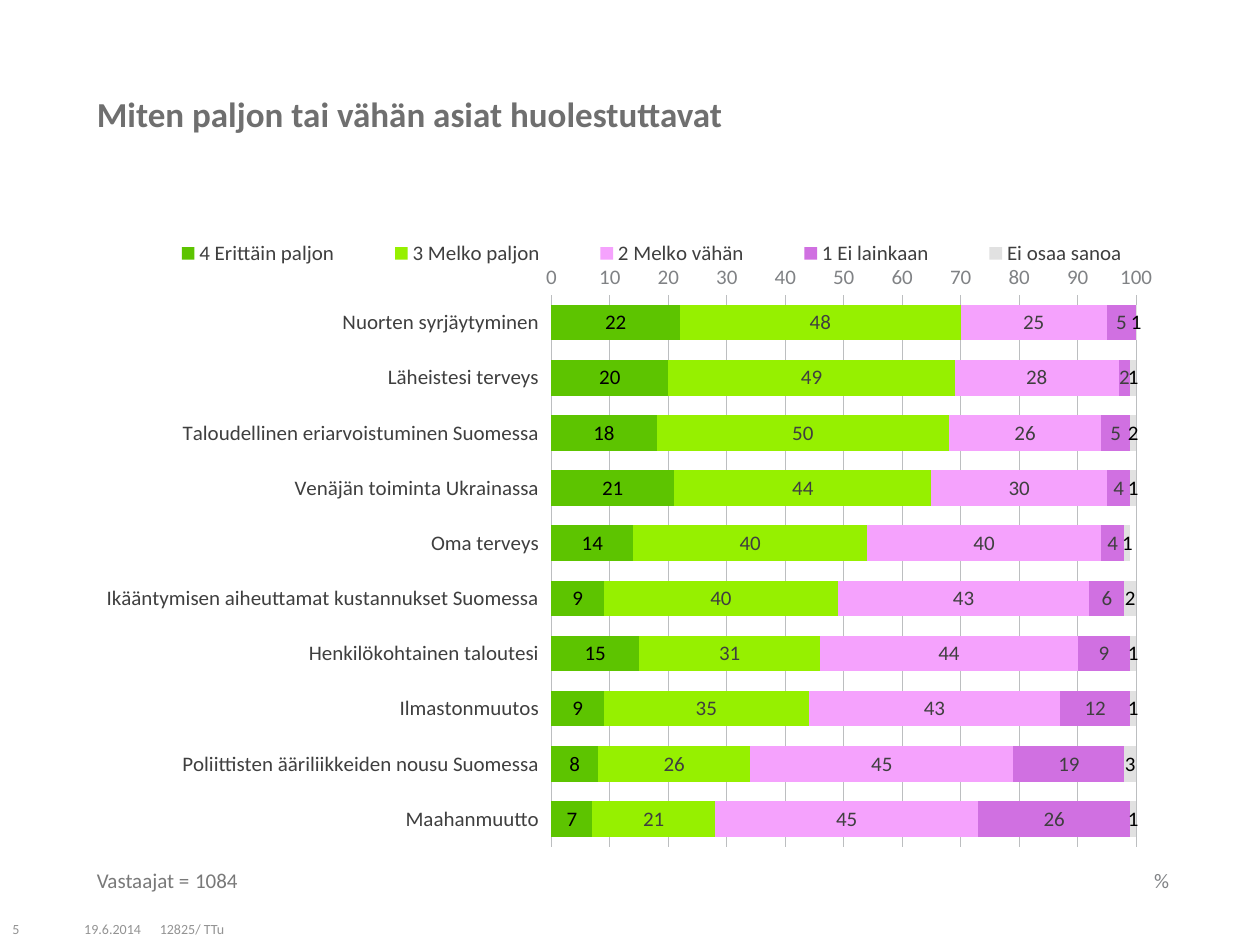
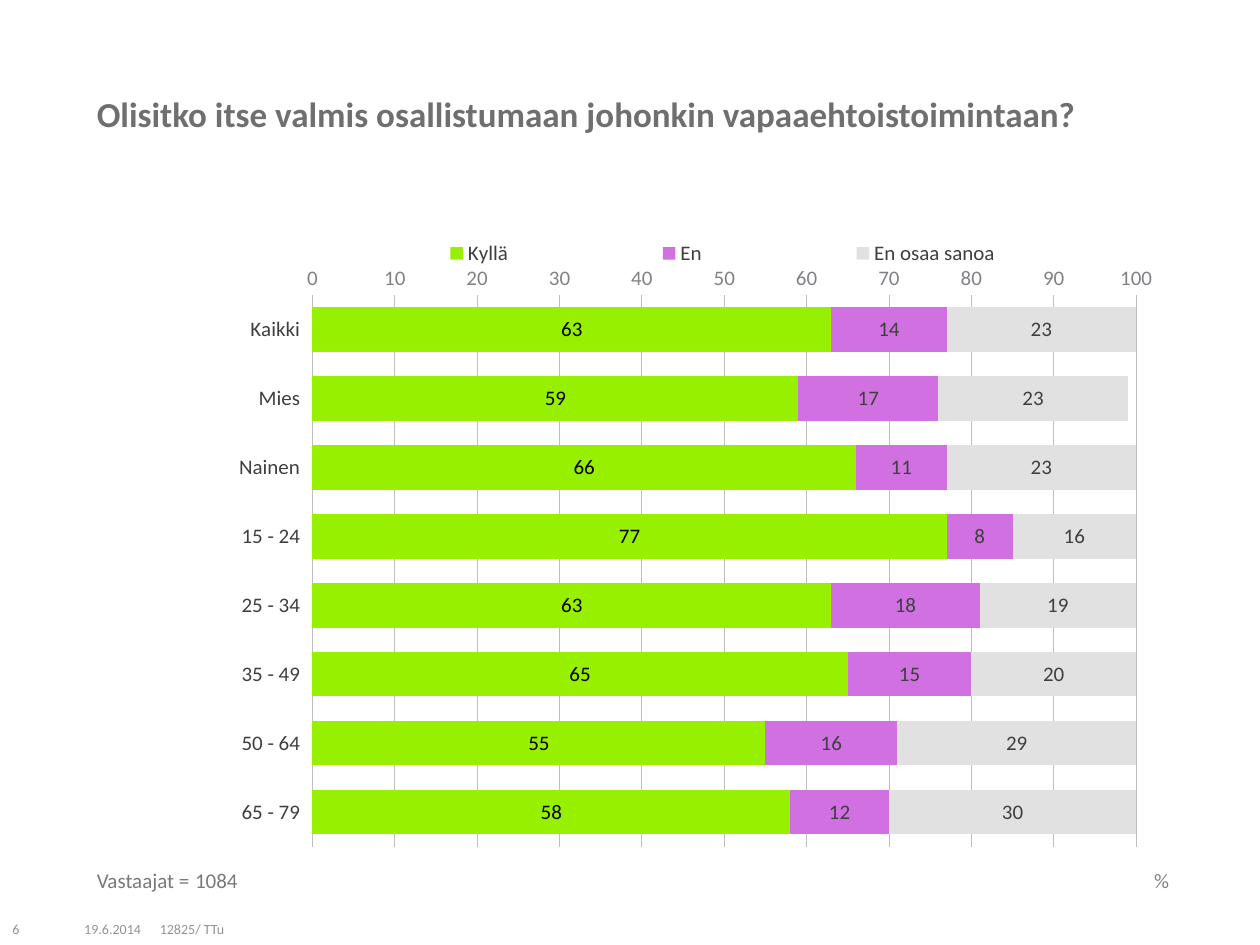
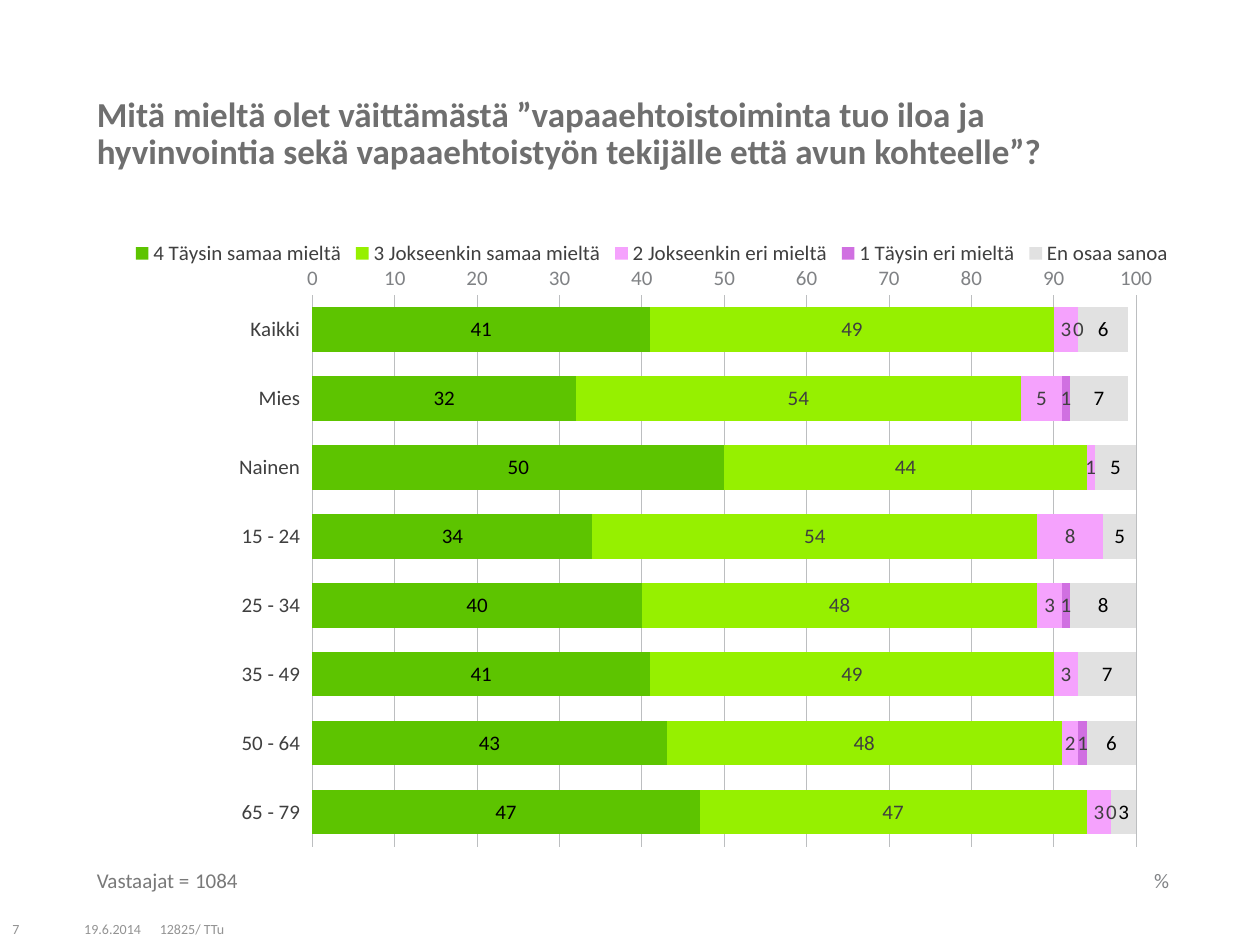
from dataclasses import dataclass

from lxml import etree
from pptx import Presentation
from pptx.chart.data import CategoryChartData
from pptx.dml.color import RGBColor
from pptx.enum.chart import (
    XL_AXIS_CROSSES, XL_CHART_TYPE, XL_LABEL_POSITION,
    XL_LEGEND_POSITION, XL_TICK_LABEL_POSITION, XL_TICK_MARK,
)
from pptx.enum.text import MSO_ANCHOR
from pptx.oxml.ns import qn
from pptx.util import Inches, Pt

STACKED = XL_CHART_TYPE.BAR_STACKED
AT_END = XL_AXIS_CROSSES.MAXIMUM
CENTER = XL_LABEL_POSITION.CENTER
LEGEND_TOP = XL_LEGEND_POSITION.TOP
LABELS_LOW = XL_TICK_LABEL_POSITION.LOW
NO_TICKS = XL_TICK_MARK.NONE
TOP = MSO_ANCHOR.TOP
MIDDLE = MSO_ANCHOR.MIDDLE


@dataclass(frozen=True)
class Theme:
    font: str = "Calibri"
    title: str = "6F6F6F"
    note: str = "797979"
    footer: str = "939393"
    ink: str = "3F3F3F"
    black: str = "000000"
    axis: str = "808285"
    grid: str = "BCBEC0"
    dark_green: str = "5DC400"
    green: str = "96F000"
    pink: str = "F5A2FD"
    purple: str = "D070E1"
    grey: str = "E1E1E1"
    title_size: int = 20
    body_size: int = 12
    footer_size: int = 8


THEME = Theme()
WIDTH, HEIGHT = Inches(10), Inches(7.5)
COLUMN, ROW = WIDTH / 100, HEIGHT / 75
MARGIN, CONTENT_WIDTH = 6.7, 86.6
FIVE_STEPS = (THEME.dark_green, THEME.green, THEME.pink, THEME.purple, THEME.grey)
YES_NO = (THEME.green, THEME.purple, THEME.grey)
GROUPS = ("Kaikki", "Mies", "Nainen", "15 - 24", "25 - 34", "35 - 49", "50 - 64", "65 - 79")
WORRIES = (
    "Nuorten syrjäytyminen", "Läheistesi terveys",
    "Taloudellinen eriarvoistuminen Suomessa", "Venäjän toiminta Ukrainassa",
    "Oma terveys", "Ikääntymisen aiheuttamat kustannukset Suomessa",
    "Henkilökohtainen taloutesi", "Ilmastonmuutos",
    "Poliittisten ääriliikkeiden nousu Suomessa", "Maahanmuutto",
)

QUESTIONS = (
    dict(
        title="Miten paljon tai vähän asiat huolestuttavat",
        categories=WORRIES,
        answers={
            "4 Erittäin paljon": (22, 20, 18, 21, 14, 9, 15, 9, 8, 7),
            "3 Melko paljon": (48, 49, 50, 44, 40, 40, 31, 35, 26, 21),
            "2 Melko vähän": (25, 28, 26, 30, 40, 43, 44, 43, 45, 45),
            "1 Ei lainkaan": (5, 2, 5, 4, 4, 6, 9, 12, 19, 26),
            "Ei osaa sanoa": (1, 1, 2, 1, 1, 2, 1, 1, 3, 1),
        },
        colors=FIVE_STEPS, plot_left=0.428, legend_span=(0.04, 0.96),
    ),
    dict(
        title="Olisitko itse valmis osallistumaan johonkin vapaaehtoistoimintaan?",
        categories=GROUPS,
        answers={
            "Kyllä": (63, 59, 66, 77, 63, 65, 55, 58),
            "En": (14, 17, 11, 8, 18, 15, 16, 12),
            "En osaa sanoa": (23, 23, 23, 16, 19, 20, 29, 30),
        },
        colors=YES_NO, plot_left=0.209, legend_span=(0.2, 0.77),
    ),
    dict(
        title="Mitä mieltä olet väittämästä ”vapaaehtoistoiminta tuo iloa ja "
              "hyvinvointia sekä vapaaehtoistyön tekijälle että avun kohteelle”?",
        categories=GROUPS,
        answers={
            "4 Täysin samaa mieltä": (41, 32, 50, 34, 40, 41, 43, 47),
            "3 Jokseenkin samaa mieltä": (49, 54, 44, 54, 48, 49, 48, 47),
            "2 Jokseenkin eri mieltä": (3, 5, 1, 8, 3, 3, 2, 3),
            "1 Täysin eri mieltä": (0, 1, None, None, 1, None, 1, 0),
            "En osaa sanoa": (6, 7, 5, 5, 8, 7, 6, 3),
        },
        colors=FIVE_STEPS, plot_left=0.209, legend_span=(0.04, 0.96),
    ),
)


def area(left, top, width, height):
    return int(left * COLUMN), int(top * ROW), int(width * COLUMN), int(height * ROW)


def style_font(font, size, color, bold=False):
    font.name = THEME.font
    font.size = Pt(size)
    font.bold = bold
    font.color.rgb = RGBColor.from_string(color)


def add_text(slide, text, place, *, size, color, bold=False, anchor=TOP, spacing=0.9):
    frame = slide.shapes.add_textbox(*area(*place)).text_frame
    frame.word_wrap = True
    frame.vertical_anchor = anchor
    paragraph = frame.paragraphs[0]
    paragraph.line_spacing = spacing
    run = paragraph.add_run()
    run.text = text
    style_font(run.font, size, color, bold)


def add_footer(slide, number):
    for text, left, width in (("19.6.2014", 5.7, 8.2), ("12825/ TTu", 11.7, 46.4), (str(number), 0, 4.5)):
        add_text(slide, text, (left, 72.5, width, 2.5), size=THEME.footer_size,
                 color=THEME.footer, anchor=MIDDLE, spacing=1.0)


def add_respondents(slide):
    for text, left in (("Vastaajat =", MARGIN), ("1084", 14.5)):
        add_text(slide, text, (left, 68.6, 13.6, 2.8), size=THEME.body_size, color=THEME.note)


def set_layout(chart, part, target=None, **shares):
    owner = chart._chartSpace.xpath(f".//{part}")[0]
    for former in owner.findall(qn("c:layout")):
        owner.remove(former)
    layout = etree.Element(qn("c:layout"))
    manual = etree.SubElement(layout, qn("c:manualLayout"))
    if target:
        etree.SubElement(manual, qn("c:layoutTarget"), val=target)
    for mode in ("xMode", "yMode"):
        etree.SubElement(manual, qn(f"c:{mode}"), val="edge")
    for side, share in shares.items():
        etree.SubElement(manual, qn(f"c:{side}"), val=str(share))
    overlay = owner.find(qn("c:overlay"))
    if overlay is None:
        owner.insert(0, layout)
    else:
        overlay.addprevious(layout)


def style_axis(axis, color):
    axis.major_tick_mark = axis.minor_tick_mark = NO_TICKS
    axis.format.line.fill.background()
    style_font(axis.tick_labels.font, THEME.body_size, color)


def style_axes(chart):
    topics, percent = chart.category_axis, chart.value_axis
    style_axis(topics, THEME.ink)
    topics.reverse_order = True
    topics.crosses = AT_END
    topics.tick_label_position = LABELS_LOW
    style_axis(percent, THEME.axis)
    percent.minimum_scale, percent.maximum_scale, percent.major_unit = 0, 100.01, 10
    percent.tick_labels.number_format = "General"
    percent.tick_labels.number_format_is_linked = False
    percent.has_major_gridlines = True
    gridline = percent.major_gridlines.format.line
    gridline.color.rgb = RGBColor.from_string(THEME.grid)
    gridline.width = Pt(0.5)
    unit = percent.axis_title.text_frame.paragraphs[0].add_run()
    unit.text = "%"
    style_font(unit.font, THEME.body_size, THEME.axis)
    set_layout(chart, "c:valAx/c:title", x=0.977, y=0.957)


def style_answers(plot, colors):
    plot.gap_width, plot.overlap = 55, 100
    plot.vary_by_categories = False
    for index, (answer, color) in enumerate(zip(plot.series, colors)):
        answer.format.fill.solid()
        answer.format.fill.fore_color.rgb = RGBColor.from_string(color)
        labels = answer.data_labels
        labels.show_value = True
        labels.position = CENTER
        labels.number_format = "#,##0"
        labels.number_format_is_linked = False
        style_font(labels.font, THEME.body_size, THEME.ink if index % 4 else THEME.black)


def add_answer_chart(slide, categories, answers, colors, plot_left, legend_span):
    data = CategoryChartData()
    data.categories = categories
    for answer, shares in answers.items():
        data.add_series(answer, shares)
    chart = slide.shapes.add_chart(STACKED, *area(MARGIN, 16.6, CONTENT_WIDTH, 54.8), data).chart
    chart.has_title = False
    style_font(chart.font, THEME.body_size, THEME.ink)
    style_axes(chart)
    style_answers(chart.plots[0], colors)
    chart.has_legend = True
    chart.legend.position = LEGEND_TOP
    chart.legend.include_in_layout = False
    style_font(chart.legend.font, THEME.body_size, THEME.ink)
    legend_left, legend_width = legend_span
    set_layout(chart, "c:legend", x=legend_left, y=0.03, w=legend_width, h=0.07)
    set_layout(chart, "c:plotArea", "inner", x=plot_left, y=0.126,
               w=round(0.964 - plot_left, 3), h=0.808)


def add_question(deck, number, title, **chart_content):
    slide = deck.slides.add_slide(deck.slide_layouts[6])
    add_footer(slide, number)
    add_answer_chart(slide, **chart_content)
    add_text(slide, title, (MARGIN, 7.2, CONTENT_WIDTH, 6.3), size=THEME.title_size,
             color=THEME.title, bold=True)
    add_respondents(slide)


def main():
    deck = Presentation()
    deck.slide_width, deck.slide_height = WIDTH, HEIGHT
    for number, question in enumerate(QUESTIONS, start=5):
        add_question(deck, number, **question)
    deck.save("out.pptx")


if __name__ == "__main__":
    main()
